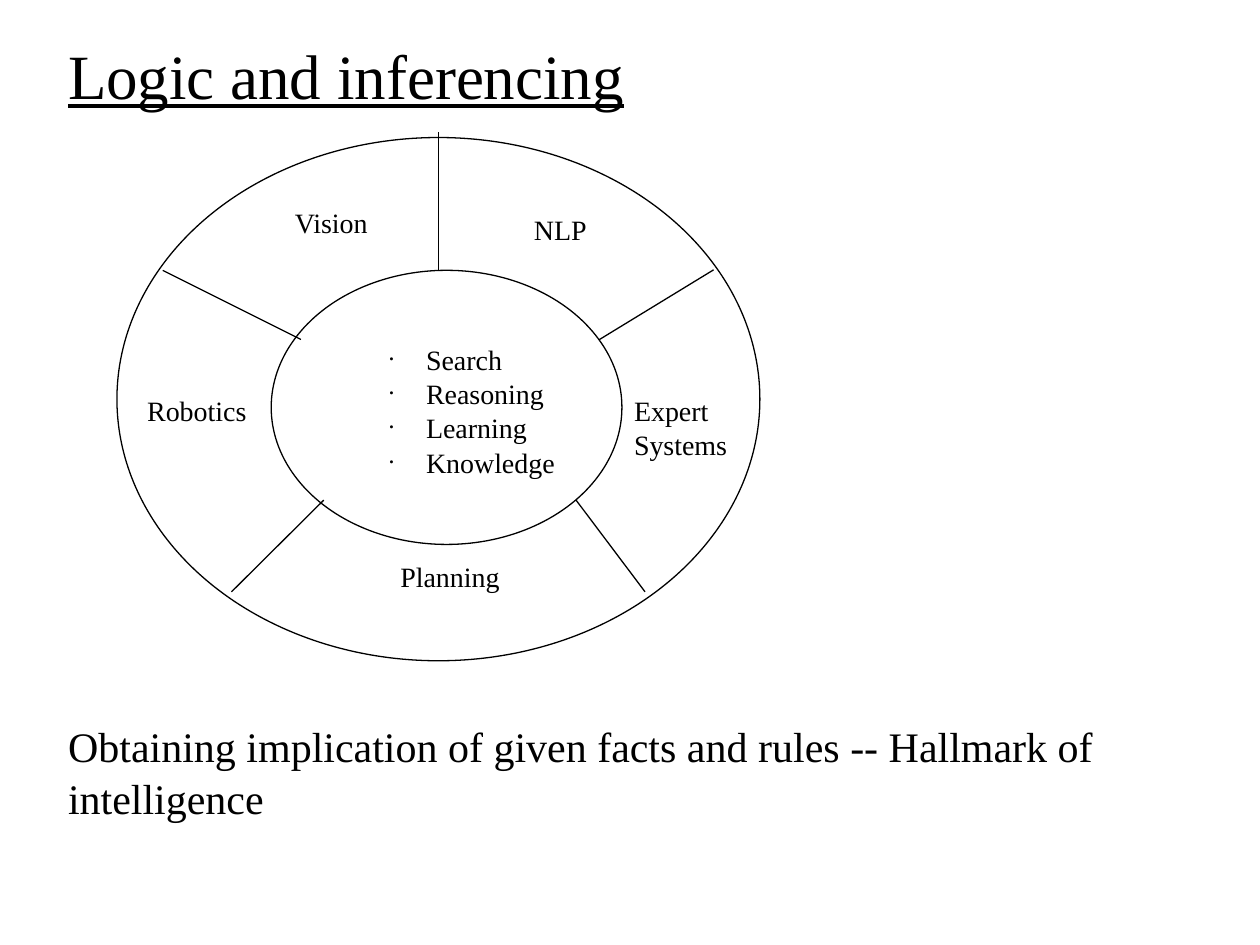
from dataclasses import dataclass

from lxml.etree import SubElement
from pptx import Presentation
from pptx.dml.color import RGBColor
from pptx.enum.shapes import MSO_CONNECTOR, MSO_SHAPE
from pptx.enum.text import MSO_ANCHOR, MSO_AUTO_SIZE, PP_ALIGN
from pptx.oxml.ns import qn
from pptx.util import Pt


@dataclass(frozen=True)
class Theme:
    font: str = "Times New Roman"
    ink: RGBColor = RGBColor(0, 0, 0)
    title_size: float = 36
    body_size: float = 24
    label_size: float = 16
    line_width: float = 0.75
    line_spacing: float = 1.02
    inset_x: float = 6.5
    inset_y: float = 3.2
    bullet_indent: float = 21
    bullet_percent: int = 45


class SlideBuilder:
    def __init__(self, slide, theme):
        self.slide = slide
        self.theme = theme

    def ellipse(self, left, top, width, height):
        ring = self.slide.shapes.add_shape(
            MSO_SHAPE.OVAL, Pt(left), Pt(top), Pt(width), Pt(height))
        ring.shadow.inherit = False
        ring.fill.background()
        self._stroke(ring.line)

    def line(self, start, end):
        spoke = self.slide.shapes.add_connector(
            MSO_CONNECTOR.STRAIGHT, *(Pt(v) for v in (*start, *end)))
        SubElement(spoke._element.spPr, qn("a:effectLst"))
        self._stroke(spoke.line)

    def text(self, lines, left, top, width, height, size,
             underline=False, bullets=False):
        theme = self.theme
        box = self.slide.shapes.add_textbox(
            Pt(left), Pt(top), Pt(width), Pt(height))
        frame = box.text_frame
        frame.word_wrap = True
        frame.auto_size = MSO_AUTO_SIZE.SHAPE_TO_FIT_TEXT
        frame.vertical_anchor = MSO_ANCHOR.TOP
        frame.margin_left = frame.margin_right = Pt(theme.inset_x)
        frame.margin_top = frame.margin_bottom = Pt(theme.inset_y)
        for index, words in enumerate(lines):
            paragraph = frame.add_paragraph() if index else frame.paragraphs[0]
            paragraph.alignment = PP_ALIGN.LEFT
            paragraph.line_spacing = theme.line_spacing
            if bullets:
                self._bullet(paragraph)
            run = paragraph.add_run()
            run.text = words
            run.font.name = theme.font
            run.font.size = Pt(size)
            run.font.color.rgb = theme.ink
            if underline:
                run.font.underline = True

    def _stroke(self, line):
        line.color.rgb = self.theme.ink
        line.width = Pt(self.theme.line_width)

    def _bullet(self, paragraph):
        theme = self.theme
        props = paragraph._p.get_or_add_pPr()
        props.set("marL", str(Pt(theme.bullet_indent)))
        props.set("indent", str(-Pt(theme.bullet_indent)))
        color = SubElement(props, qn("a:buClr"))
        SubElement(color, qn("a:srgbClr"), val=str(theme.ink))
        SubElement(props, qn("a:buSzPct"), val=str(theme.bullet_percent * 1000))
        SubElement(props, qn("a:buFont"), typeface=theme.font)
        SubElement(props, qn("a:buChar"), char="•")


def main():
    deck = Presentation()
    deck.slide_width, deck.slide_height = Pt(720), Pt(540)
    theme = Theme()
    page = SlideBuilder(deck.slides.add_slide(deck.slide_layouts[6]), theme)

    # Title
    page.text(["Logic and inferencing"], 32.4, 16.6, 653, 51,
              theme.title_size, underline=True)

    # Outer ring of fields around the core
    page.ellipse(66.8, 78.6, 367.4, 299)
    page.ellipse(155, 154.5, 200.4, 156.6)

    # Spokes between the fields
    spokes = [
        ((93, 154.5), (172, 194)),
        ((185, 285.8), (132.3, 338.2)),
        ((329.2, 285.8), (368.6, 338.2)),
        ((342.3, 194.2), (407.8, 154.2)),
        ((250.5, 154.5), (250.5, 75.6)),
    ]
    for start, end in spokes:
        page.line(start, end)

    # Field names
    fields = [
        ("Vision", 162, 113.8, 65.5, 26.6),
        ("NLP", 298.6, 118, 65.5, 26.6),
        ("Expert Systems", 355.8, 221.2, 85, 46.8),
        ("Planning", 222.3, 316, 88, 26.6),
        ("Robotics", 77.6, 221.2, 85.7, 26.6),
    ]
    for field, *place in fields:
        page.text([field], *place, theme.label_size)

    # Core topics
    page.text(["Search", "Reasoning", "Learning", "Knowledge"],
              216, 192.2, 126.7, 86.4, theme.label_size, bullets=True)

    # Closing statement
    page.text(["Obtaining implication of given facts and rules -- "
               "Hallmark of intelligence"],
              32.4, 408.2, 636.5, 64, theme.body_size)

    deck.save("out.pptx")


if __name__ == "__main__":
    main()
